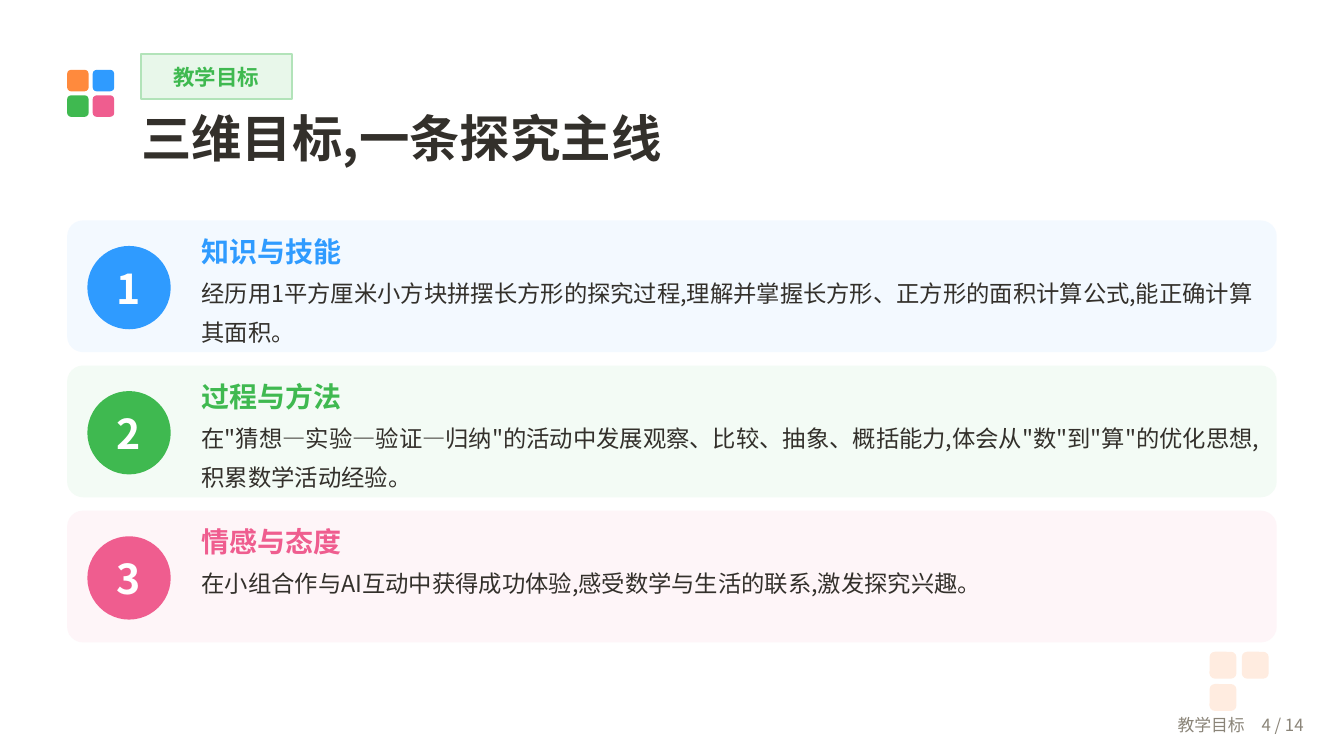
from lxml import etree
from pptx import Presentation
from pptx import util as u
from pptx.dml.color import RGBColor
from pptx.enum import shapes, text
from pptx.oxml import ns

WHITE = RGBColor(0xFF, 0xFF, 0xFF)
INK = RGBColor(0x33, 0x30, 0x2B)
GREY = RGBColor(0x8A, 0x84, 0x78)
ORANGE = RGBColor(0xFF, 0x8A, 0x3D)
BLUE = RGBColor(0x2F, 0x9B, 0xFF)
GREEN = RGBColor(0x3F, 0xB9, 0x50)
PINK = RGBColor(0xEF, 0x5D, 0x8F)
PALE_ORANGE = RGBColor(0xFF, 0xEC, 0xE0)
PALE_BLUE = RGBColor(0xF3, 0xF9, 0xFF)
PALE_GREEN = RGBColor(0xF3, 0xFB, 0xF5)
PALE_PINK = RGBColor(0xFE, 0xF5, 0xF8)
TAG_FILL = RGBColor(0xE8, 0xF7, 0xEA)
TAG_LINE = RGBColor(0xB2, 0xE3, 0xB9)

GOALS = [
    ("知识与技能",
     "经历用1平方厘米小方块拼摆长方形的探究过程,理解并掌握长方形、正方形的面积计算公式,能正确计算其面积。",
     BLUE, PALE_BLUE),
    ("过程与方法",
     '在"猜想—实验—验证—归纳"的活动中发展观察、比较、抽象、概括能力,体会从"数"到"算"的优化思想,积累数学活动经验。',
     GREEN, PALE_GREEN),
    ("情感与态度",
     "在小组合作与AI互动中获得成功体验,感受数学与生活的联系,激发探究兴趣。",
     PINK, PALE_PINK),
]


class SlideBuilder:
    font_name = "Noto Sans CJK SC"
    frame_format = {
        "word_wrap": True,
        "auto_size": text.MSO_AUTO_SIZE.NONE,
        "margin_left": 0,
        "margin_top": 0,
        "margin_right": 0,
        "margin_bottom": 0,
    }

    def __init__(self, slide):
        self.slide = slide

    def set_all(self, target, values):
        for name, value in values.items():
            setattr(target, name, value)

    def fill_text(self, shape, lines, align=text.PP_ALIGN.LEFT,
                  anchor=text.MSO_ANCHOR.TOP, spacing=None):
        frame = shape.text_frame
        self.set_all(frame, {**self.frame_format, "vertical_anchor": anchor})
        for index, (words, size, color, bold) in enumerate(lines):
            paragraph = frame.add_paragraph() if index else frame.paragraphs[0]
            self.set_all(paragraph, {"alignment": align, "line_spacing": spacing})
            run = paragraph.add_run()
            run.text = words
            self.set_all(run.font, {"name": self.font_name, "size": u.Pt(size), "bold": bold})
            run.font.color.rgb = color
            east_asian = etree.SubElement(run._r.get_or_add_rPr(), ns.qn("a:ea"))
            east_asian.set("typeface", self.font_name)

    def title(self, words, *box):
        title = self.slide.shapes.title
        self.set_all(title, dict(zip(("left", "top", "width", "height"), map(u.Pt, box))))
        self.fill_text(title, [(words, 27, INK, True)])

    def shape(self, kind, fill, *box, line=None, corner=None):
        shape = self.slide.shapes.add_shape(kind, *map(u.Pt, box))
        shape.shadow.inherit = False
        shape.fill.solid()
        shape.fill.fore_color.rgb = fill
        if line is None:
            shape.line.fill.background()
        else:
            shape.line.color.rgb = line
            shape.line.width = u.Pt(1)
        if corner is not None:
            shape.adjustments[0] = corner
        return shape

    def rounded(self, fill, corner, *box):
        return self.shape(shapes.MSO_SHAPE.ROUNDED_RECTANGLE, fill, *box, corner=corner)

    def text_box(self, lines, *box, **layout):
        shape = self.slide.shapes.add_textbox(*map(u.Pt, box))
        self.fill_text(shape, lines, **layout)

    def tiles(self, colors, left, top, size, pitch, corner):
        for index, color in enumerate(colors):
            row, column = divmod(index, 2)
            self.rounded(color, corner, left + column * pitch, top + row * pitch, size, size)

    def tag(self, words, *box):
        shape = self.shape(shapes.MSO_SHAPE.RECTANGLE, TAG_FILL, *box, line=TAG_LINE)
        self.fill_text(shape, [(words, 11.5, GREEN, True)],
                       align=text.PP_ALIGN.CENTER, anchor=text.MSO_ANCHOR.MIDDLE)

    def goal_card(self, number, top, heading, body, color, fill):
        self.rounded(fill, 0.12, 36, top, 648, 70.56)
        badge = self.shape(shapes.MSO_SHAPE.OVAL, color, 46.8, top + 13.68, 44.64, 44.64)
        self.fill_text(badge, [(str(number), 22, WHITE, True)],
                       align=text.PP_ALIGN.CENTER, anchor=text.MSO_ANCHOR.MIDDLE)
        self.text_box([(heading, 15, color, True), (body, 12.5, INK, False)],
                      108, top + 4.32, 565.2, 68.4, spacing=u.Pt(21))


def main():
    presentation = Presentation()
    presentation.slide_width = u.Pt(720)
    presentation.slide_height = u.Pt(405)
    builder = SlideBuilder(presentation.slides.add_slide(presentation.slide_layouts[5]))

    builder.tiles([PALE_ORANGE] * 3, 648, 349.2, 14.4, 17.28, 0.2)
    builder.tiles([ORANGE, BLUE, GREEN, PINK], 36, 37.44, 11.52, 13.68, 0.18)
    builder.tag("教学目标", 75.6, 28.8, 80.64, 24.48)
    builder.title("三维目标,一条探究主线", 75.6, 57.6, 604.8, 39.6)
    for index, goal in enumerate(GOALS):
        builder.goal_card(index + 1, 118.08 + index * 77.76, *goal)
    builder.text_box([("教学目标　4 / 14", 9, GREY, False)], 576, 377.28, 122.4, 21.6,
                     align=text.PP_ALIGN.RIGHT, anchor=text.MSO_ANCHOR.MIDDLE)

    presentation.save("out.pptx")


if __name__ == "__main__":
    main()
